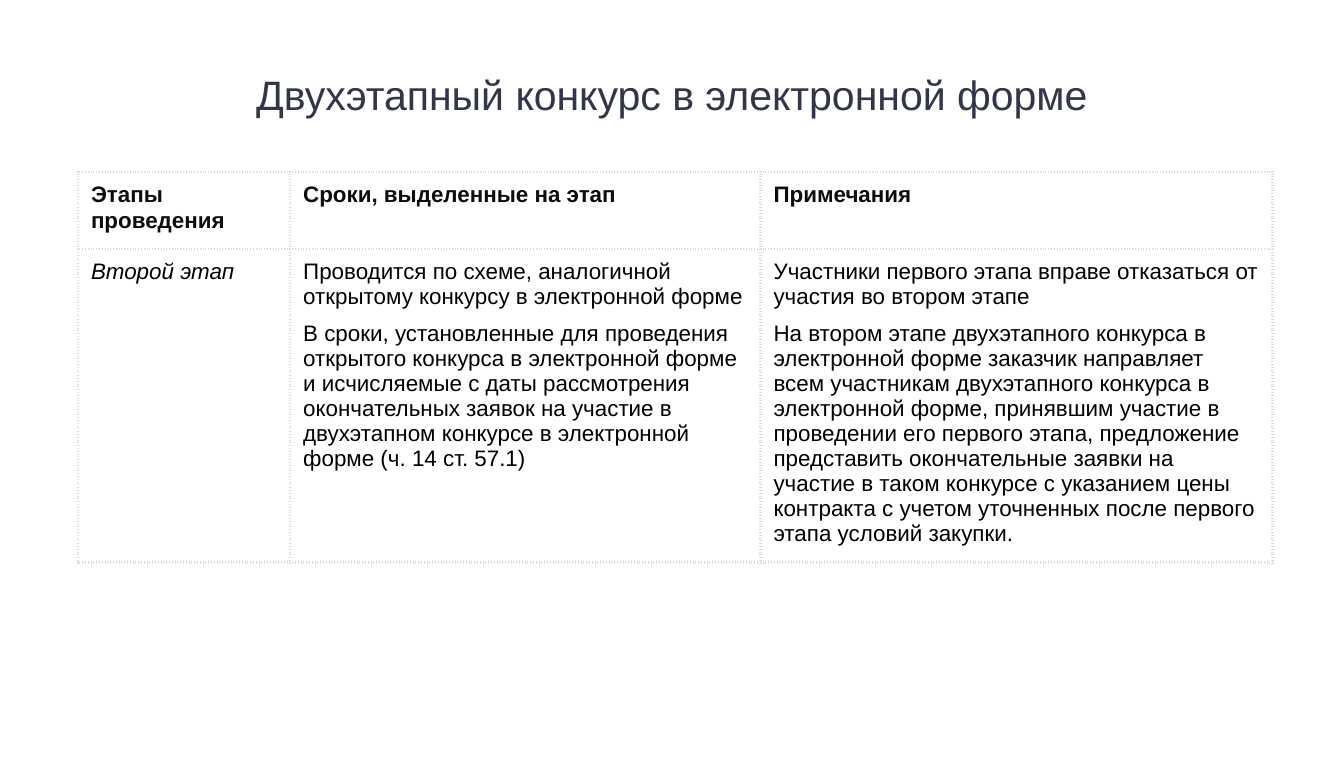
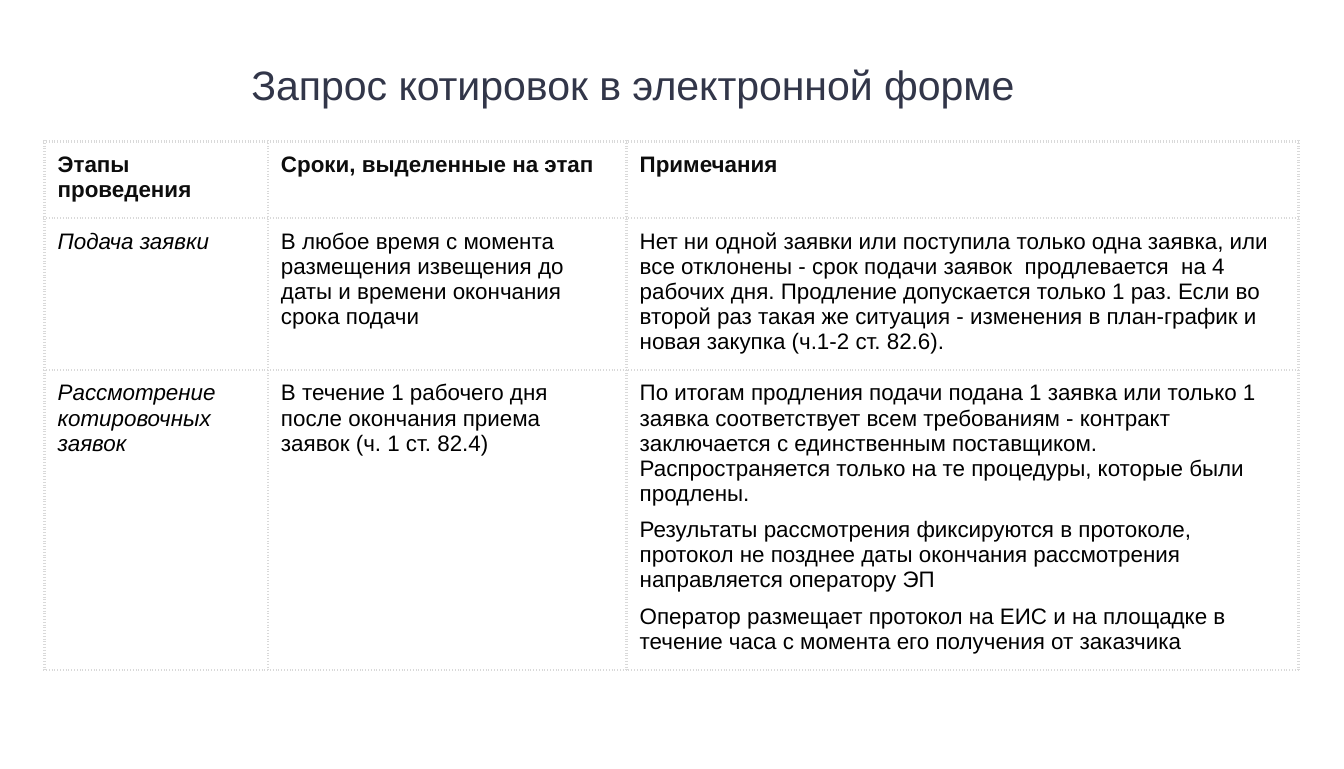
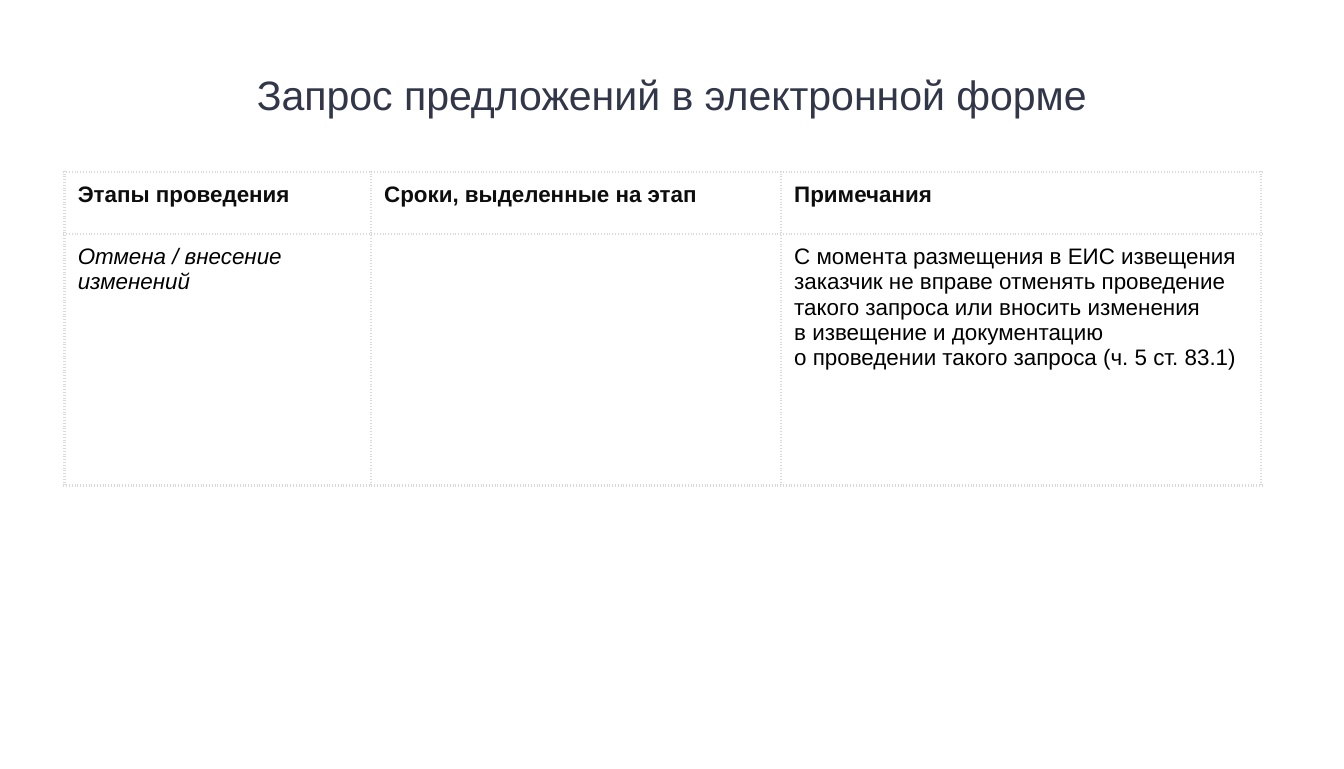
import dataclasses

import lxml.etree
import pptx
import pptx.dml.color
import pptx.enum.text
import pptx.oxml.ns
import pptx.presentation
import pptx.table
import pptx.util

Cm = pptx.util.Cm
Pt = pptx.util.Pt
RGB = pptx.dml.color.RGBColor.from_string


@dataclasses.dataclass(frozen=True)
class Theme:
    font: str = "Arial"
    title_size: int = 22
    text_size: int = 12
    title_color: str = "323649"
    header_color: str = "0D0D0D"
    text_color: str = "000000"
    border_color: str = "D9D9D9"
    border_width: float = 1.5
    space_after: int = 6


@dataclasses.dataclass(frozen=True)
class Stage:
    """One table row; each string in a tuple is a paragraph."""
    name: str
    terms: tuple[str, ...]
    notes: tuple[str, ...]
    height: float


@dataclasses.dataclass(frozen=True)
class Procedure:
    """One slide; lengths are centimetres."""
    title: str
    table_left: float
    table_top: float
    columns: tuple[float, float, float]
    header_height: float
    stages: tuple[Stage, ...]
    title_width: float = 22.86
    title_height: float = 2.41


THEME = Theme()
HEADERS = ("Этапы проведения", "Сроки, выделенные на этап", "Примечания")
TITLE_LEFT, TITLE_TOP = 1.27, 0.58

PROCEDURES = (
    Procedure(
        "Двухэтапный конкурс в электронной форме",
        1.47, 3.25, (4.01, 8.89, 9.68), 1.45,
        (
            Stage(
                "Второй этап",
                ("Проводится по схеме, аналогичной открытому конкурсу в электронной форме",
                 "В сроки, установленные для проведения открытого конкурса в электронной форме "
                 "и исчисляемые с даты рассмотрения окончательных заявок на участие в "
                 "двухэтапном конкурсе в электронной форме (ч. 14 ст. 57.1)"),
                ("Участники первого этапа вправе отказаться от участия во втором этапе",
                 "На втором этапе двухэтапного конкурса в электронной форме заказчик направляет "
                 "всем участникам двухэтапного конкурса в электронной форме, принявшим участие в "
                 "проведении его первого этапа, предложение представить окончательные заявки на "
                 "участие в таком конкурсе с указанием цены контракта с учетом уточненных после "
                 "первого этапа условий закупки."),
                5.93,
            ),
        ),
    ),
    Procedure(
        "Запрос котировок в электронной форме",
        0.84, 2.67, (4.22, 6.78, 12.7), 1.45,
        (
            Stage(
                "Подача заявки",
                ("В любое время с момента размещения извещения до даты и времени окончания "
                 "срока подачи",),
                ("Нет ни одной заявки или поступила только одна заявка, или все отклонены - "
                 "срок подачи заявок  продлевается  на 4 рабочих дня. Продление допускается "
                 "только 1 раз. Если во второй раз такая же ситуация - изменения в план-график "
                 "и новая закупка (ч.1-2 ст. 82.6).",),
                2.87,
            ),
            Stage(
                "Рассмотрение котировочных заявок",
                ("В течение 1 рабочего дня после окончания приема заявок (ч. 1 ст. 82.4)",),
                ("По итогам продления подачи подана 1 заявка или только 1 заявка соответствует "
                 "всем требованиям - контракт заключается с единственным поставщиком. "
                 "Распространяется только на те процедуры, которые были продлены.",
                 "Результаты рассмотрения фиксируются в протоколе, протокол не позднее даты "
                 "окончания рассмотрения направляется оператору ЭП",
                 "Оператор размещает протокол на ЕИС и на площадке в течение часа с момента его "
                 "получения от заказчика"),
                5.66,
            ),
        ),
        title_width=21.39,
        title_height=2.03,
    ),
    Procedure(
        "Запрос предложений в электронной форме",
        1.22, 3.25, (5.79, 7.75, 9.07), 1.17,
        (
            Stage(
                "Отмена / внесение изменений",
                (),
                ("С момента размещения в ЕИС извещения заказчик не вправе отменять проведение "
                 "такого запроса или вносить изменения \vв извещение и документацию "
                 "\vо проведении такого запроса (ч. 5 ст. 83.1)",),
                4.75,
            ),
        ),
    ),
)


def add_borders(cell: pptx.table._Cell) -> None:
    qn = pptx.oxml.ns.qn
    tc_pr = cell._tc.get_or_add_tcPr()
    for side in ("a:lnL", "a:lnR", "a:lnT", "a:lnB"):
        ln = lxml.etree.SubElement(tc_pr, qn(side), w=str(Pt(THEME.border_width)))
        fill = lxml.etree.SubElement(ln, qn("a:solidFill"))
        lxml.etree.SubElement(fill, qn("a:srgbClr"), val=THEME.border_color)
        lxml.etree.SubElement(ln, qn("a:prstDash"), val="sysDot")


def fill_cell(cell: pptx.table._Cell, paragraphs: tuple[str, ...], color: str,
              bold: bool = False, italic: bool = False) -> None:
    cell.margin_left = cell.margin_right = Cm(0.25)
    cell.margin_top, cell.margin_bottom = Cm(0.2), Cm(0.3)
    add_borders(cell)
    cell.fill.background()
    tf = cell.text_frame
    for i, text in enumerate(paragraphs):
        p = tf.add_paragraph() if i else tf.paragraphs[0]
        p.text = text
        p.space_after = Pt(THEME.space_after)
        for r in p.runs:
            r.font.name, r.font.size = THEME.font, Pt(THEME.text_size)
            r.font.bold, r.font.italic = bold, italic
            r.font.color.rgb = RGB(color)


def format_title(sp, procedure: Procedure) -> None:
    sp.left, sp.top = Cm(TITLE_LEFT), Cm(TITLE_TOP)
    sp.width, sp.height = Cm(procedure.title_width), Cm(procedure.title_height)
    tf = sp.text_frame
    tf.text = procedure.title
    tf.vertical_anchor = pptx.enum.text.MSO_ANCHOR.MIDDLE
    p = tf.paragraphs[0]
    p.alignment = pptx.enum.text.PP_ALIGN.CENTER
    font = p.runs[0].font
    font.name, font.size = THEME.font, Pt(THEME.title_size)
    font.color.rgb = RGB(THEME.title_color)


def add_stage_table(slide, procedure: Procedure) -> None:
    heights = [procedure.header_height] + [s.height for s in procedure.stages]
    table = slide.shapes.add_table(
        len(heights), len(HEADERS), Cm(procedure.table_left), Cm(procedure.table_top),
        Cm(sum(procedure.columns)), Cm(sum(heights))).table
    table.first_row = table.horz_banding = False
    for column, width in zip(table.columns, procedure.columns):
        column.width = Cm(width)
    for row, height in zip(table.rows, heights):
        row.height = Cm(height)
    for i, header in enumerate(HEADERS):
        fill_cell(table.cell(0, i), (header,), THEME.header_color, bold=True)
    for i, stage in enumerate(procedure.stages, start=1):
        fill_cell(table.cell(i, 0), (stage.name,), THEME.text_color, italic=True)
        fill_cell(table.cell(i, 1), stage.terms, THEME.text_color)
        fill_cell(table.cell(i, 2), stage.notes, THEME.text_color)


def add_procedure_slide(prs: pptx.presentation.Presentation, procedure: Procedure) -> None:
    slide = prs.slides.add_slide(prs.slide_layouts.get_by_name("Title Only"))
    format_title(slide.shapes.title, procedure)
    add_stage_table(slide, procedure)


def main() -> None:
    prs = pptx.Presentation()
    prs.slide_width, prs.slide_height = Cm(25.4), Cm(14.53)
    for procedure in PROCEDURES:
        add_procedure_slide(prs, procedure)
    prs.save("out.pptx")


if __name__ == "__main__":
    main()
